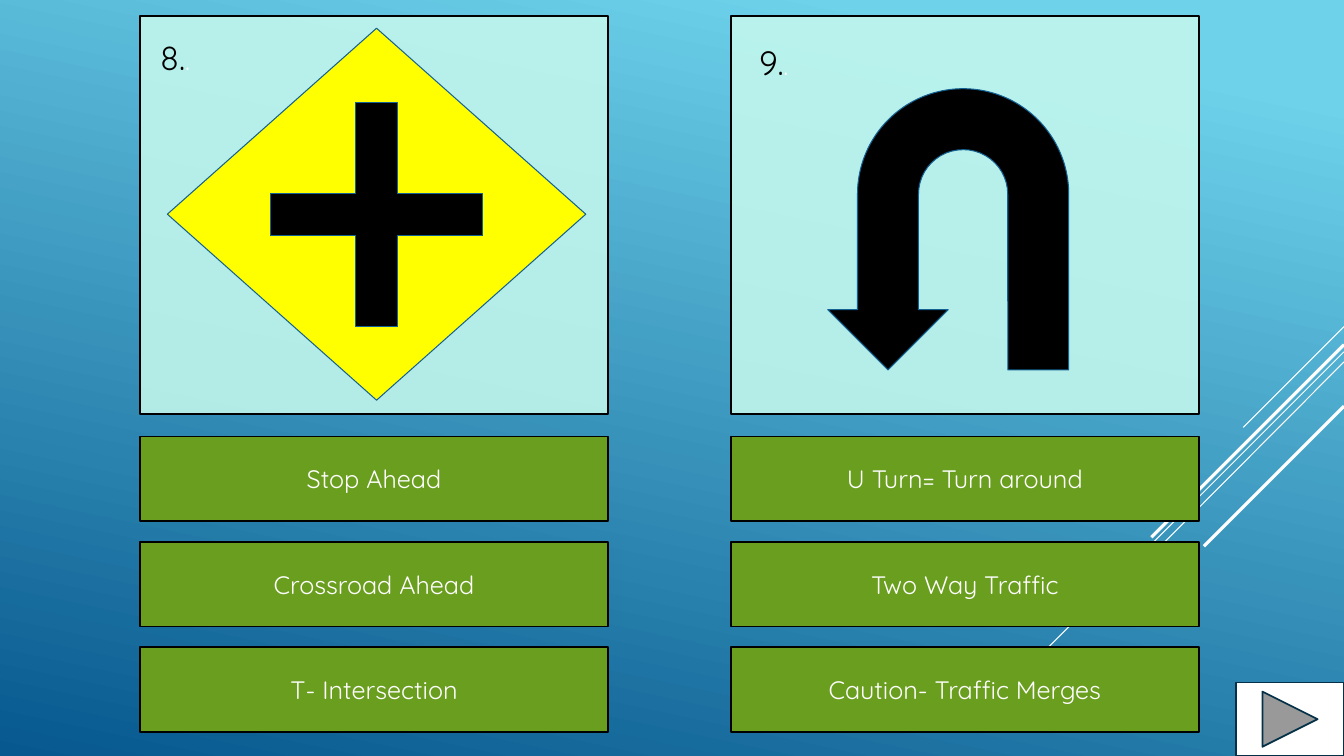
from lxml import etree
from pptx import Presentation
from pptx.dml.color import RGBColor
from pptx.enum import shapes, text
from pptx.oxml import ns
from pptx.util import Inches, Pt

COLORS = {
    "sky": "6ED2EB",
    "deep": "06588E",
    "panel": "C3F7ED",
    "answer": "6A9E1F",
    "sign": "FFFF00",
    "outline": "146194",
    "button_line": "043148",
    "black": "000000",
    "white": "FFFFFF",
}
FONT = "Quicksand"
COLUMN_WIDTH = 4.64
ANSWER_TOP = 4.33
ANSWER_STEP = 1.045
STREAKS = [
    (3.24, 12.33, 4.24, 0.75),
    (3.49, 10.07, 6.75, 0.75),
    (3.59, 11.26, 5.67, 0.75),
    (3.42, 11.42, 5.33, 2.25),
    (4.03, 11.94, 5.42, 2.25),
]
QUESTIONS = [
    (1.39, ["Stop Ahead", "Crossroad Ahead", "T- Intersection"]),
    (7.25, ["U Turn= Turn around", "Two Way Traffic", "Caution- Traffic Merges"]),
]


def color(name):
    return RGBColor.from_string(COLORS[name])


def paint_background(slide):
    fill = slide.background.fill
    fill.gradient()
    fill.gradient_angle = 258
    for stop, name, position in zip(fill.gradient_stops, ("sky", "deep"), (0.1, 1)):
        stop.color.rgb = color(name)
        stop.position = position


def add_streak(slide, top, end_left, end_top, width):
    line = slide.shapes.add_connector(
        shapes.MSO_CONNECTOR.STRAIGHT,
        Inches(13.33), Inches(top), Inches(end_left), Inches(end_top),
    )
    line.line.color.rgb = color("white")
    line.line.width = Pt(width)
    etree.SubElement(line._element.spPr, ns.qn("a:effectLst"))


def add_figure(slide, kind, box, fill, outline, width, adjustments=()):
    shape = slide.shapes.add_shape(kind, *map(Inches, box))
    shape.shadow.inherit = False
    shape.fill.solid()
    shape.fill.fore_color.rgb = color(fill)
    shape.line.color.rgb = color(outline)
    shape.line.width = Pt(width)
    for index, value in enumerate(adjustments):
        shape.adjustments[index] = value
    return shape


def add_panel(slide, left):
    box = (left, 0.16, COLUMN_WIDTH, 3.95)
    panel = add_figure(slide, shapes.MSO_SHAPE.RECTANGLE, box, "panel", "black", 1.25)
    fill_color = panel._element.spPr.find(".//" + ns.qn("a:srgbClr"))
    etree.SubElement(fill_color, ns.qn("a:alpha"), val="89000")


def add_answer(slide, left, top, label):
    box = (left, top, COLUMN_WIDTH, 0.84)
    shape = add_figure(slide, shapes.MSO_SHAPE.RECTANGLE, box, "answer", "black", 1.25)
    shape.text_frame.vertical_anchor = text.MSO_ANCHOR.MIDDLE
    paragraph = shape.text_frame.paragraphs[0]
    paragraph.text = label
    paragraph.alignment = text.PP_ALIGN.CENTER
    paragraph.font.name = FONT
    paragraph.font.size = Pt(18)
    paragraph.font.color.rgb = color("white")


def add_number(slide, left, top, number):
    box = slide.shapes.add_textbox(Inches(left), Inches(top), Inches(0.51), Inches(0.81))
    frame = box.text_frame
    frame.word_wrap = True
    frame.margin_right = 0
    paragraph = frame.paragraphs[0]
    paragraph.font.name = FONT
    for content, size, name in ((number, 24, "black"), (".", 18, "white")):
        run = paragraph.add_run()
        run.text = content
        run.font.size = Pt(size)
        run.font.color.rgb = color(name)


def add_crossroad_sign(slide):
    add_figure(slide, shapes.MSO_SHAPE.DIAMOND, (1.66, 0.28, 4.15, 3.69),
               "sign", "outline", 0.75)
    add_figure(slide, shapes.MSO_SHAPE.MATH_PLUS, (2.3, 0.62, 2.87, 3.02),
               "black", "outline", 0.75, [0.146])


def add_u_turn(slide):
    arrow = add_figure(slide, shapes.MSO_SHAPE.U_TURN_ARROW, (8.21, 0.88, 2.39, 2.79),
                       "black", "outline", 0.75, [0.253, 0.25, 0.25, 0.438, 1])
    arrow._element.spPr.find(ns.qn("a:xfrm")).set("flipH", "1")


def main():
    presentation = Presentation()
    presentation.slide_width = Inches(13.33)
    presentation.slide_height = Inches(7.5)
    slide = presentation.slides.add_slide(presentation.slide_layouts[6])
    paint_background(slide)
    for streak in STREAKS:
        add_streak(slide, *streak)
    for left, answers in QUESTIONS:
        add_panel(slide, left)
        for row, label in enumerate(answers):
            add_answer(slide, left, ANSWER_TOP + row * ANSWER_STEP, label)
    add_crossroad_sign(slide)
    add_u_turn(slide)
    add_number(slide, 1.49, 0.32, "8.")
    add_number(slide, 7.43, 0.37, "9.")
    add_figure(slide, shapes.MSO_SHAPE.ACTION_BUTTON_FORWARD_OR_NEXT,
               (12.26, 6.77, 1.07, 0.73), "white", "button_line", 1.25)
    presentation.save("out.pptx")


if __name__ == "__main__":
    main()
